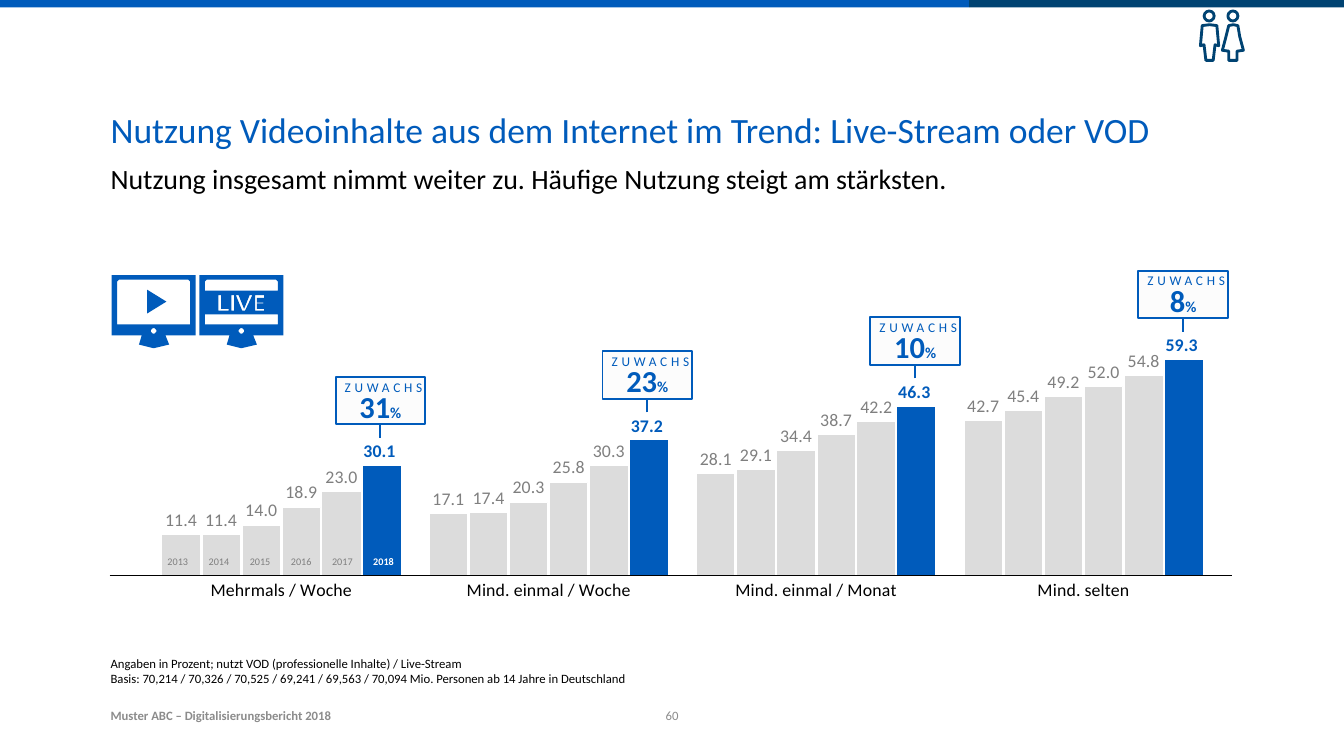
from pptx import Presentation
from pptx.chart.data import CategoryChartData
from pptx.dml.color import RGBColor
from pptx.enum.chart import XL_CHART_TYPE as ChartType
from pptx.enum.chart import XL_LABEL_POSITION as LabelPosition
from pptx.enum.chart import XL_TICK_MARK as TickMark
from pptx.enum.shapes import MSO_CONNECTOR as Connector
from pptx.enum.shapes import MSO_SHAPE as Shape
from pptx.enum.text import MSO_ANCHOR as Anchor
from pptx.enum.text import MSO_AUTO_SIZE as AutoSize
from pptx.enum.text import PP_ALIGN as Align
from pptx.oxml import parse_xml
from pptx.oxml.ns import nsdecls, qn
from pptx.util import Pt

PX = 9144
FONT = "Calibri"
BLUE = RGBColor(0x00, 0x5B, 0xBB)
NAVY = RGBColor(0x00, 0x43, 0x72)
BLACK = RGBColor(0x00, 0x00, 0x00)
WHITE = RGBColor(0xFF, 0xFF, 0xFF)
BAR_GREY = RGBColor(0xDC, 0xDC, 0xDC)
LABEL_GREY = RGBColor(0x7F, 0x7F, 0x7F)
FOOTER_GREY = RGBColor(0x8C, 0x8C, 0x8C)
CALLOUT_FILL = RGBColor(0xFC, 0xFC, 0xFC)
NO_STYLE = "{2D5ABB26-0587-4C30-8999-92F81FD0307C}"

FREQUENCIES = ["Mehrmals / Woche", "Mind. einmal / Woche",
               "Mind. einmal / Monat", "Mind. selten"]
USAGE = {
    "2013": (11.4, 17.1, 28.1, 42.7),
    "2014": (11.4, 17.4, 29.1, 45.4),
    "2015": (14.0, 20.3, 34.4, 49.2),
    "2016": (18.9, 25.8, 38.7, 52.0),
    "2017": (23.0, 30.3, 42.2, 54.8),
    "2018": (30.1, 37.2, 46.3, 59.3),
}
GROWTH = [("31", 412), ("23", 384), ("10", 347), ("8", 296)]

MONITOR = [
    [(0, 0), (92, 0), (92, 66), (59, 66), (63, 76), (46, 80), (30, 76), (33, 66), (0, 66)],
    [(45, 58), (47, 58), (49, 60), (49, 62), (47, 64), (45, 64), (43, 62), (43, 60)],
]
PLAY_SCREEN = [
    [(6, 7), (8, 5), (84, 5), (86, 7), (86, 54), (6, 54)],
    [(39, 16), (60, 29), (39, 42)],
]
LIVE_SCREEN = [
    [(6, 7), (8, 5), (84, 5), (86, 7), (86, 17), (6, 17)],
    [(6, 43), (86, 43), (86, 54), (6, 54)],
    [(21, 22), (24, 22), (24, 37), (32, 37), (32, 39), (21, 39)],
    [(35, 22), (38, 22), (38, 39), (35, 39)],
    [(40, 22), (43, 22), (49, 37), (55, 22), (58, 22), (50, 39), (47, 39)],
    [(61, 22), (71, 22), (71, 25), (63, 25), (63, 30), (70, 30), (70, 31),
     (63, 31), (63, 37), (71, 37), (71, 39), (61, 39)],
]
MAN = [(4, 17), (12, 16), (20, 17), (22, 39), (18, 38), (16, 55), (8, 55), (6, 38), (2, 39)]
WOMAN = [(33, 17), (38, 16), (43, 17), (45, 29), (49, 44), (42, 45), (42, 55),
         (33, 55), (33, 45), (26, 44), (30, 29)]


def box(left, top, width, height):
    return left * PX, top * PX, width * PX, height * PX


def style_font(font, size, color, bold=False):
    font.name = FONT
    font.size = Pt(size)
    font.bold = bold
    font.color.rgb = color


def set_text(frame, text, size, color, bold=False, align=Align.LEFT,
             anchor=Anchor.TOP, insets=(0, 0, 0, 0)):
    frame.word_wrap = True
    frame.auto_size = AutoSize.NONE
    frame.vertical_anchor = anchor
    frame.margin_left, frame.margin_top, frame.margin_right, frame.margin_bottom = (
        inset * PX for inset in insets)
    paragraph = frame.paragraphs[0]
    paragraph.text = text
    paragraph.alignment = align
    paragraph.space_before = Pt(0)
    for run in paragraph.runs:
        style_font(run.font, size, color, bold)
    return paragraph


def fill_placeholder(placeholder, area, text, size, color, anchor=Anchor.TOP):
    placeholder.left, placeholder.top, placeholder.width, placeholder.height = box(*area)
    set_text(placeholder.text_frame, text, size, color, anchor=anchor)


def add_label(slide, area, text, size, color, **layout):
    label = slide.shapes.add_textbox(*box(*area))
    return set_text(label.text_frame, text, size, color, **layout)


def add_block(slide, kind, area, fill=None, line=None, weight=1.5):
    block = slide.shapes.add_shape(kind, *box(*area))
    paint(block, fill, line, weight)
    return block


def paint(shape, fill, line, weight):
    shape.shadow.inherit = False
    if fill is None:
        shape.fill.background()
    else:
        shape.fill.solid()
        shape.fill.fore_color.rgb = fill
    if line is None:
        shape.line.fill.background()
    else:
        shape.line.color.rgb = line
        shape.line.width = Pt(weight)


def add_outline(slide, left, top, contours, fill=None, line=None, weight=1.5):
    moved = [[(left + x, top + y) for x, y in contour] for contour in contours]
    builder = slide.shapes.build_freeform(*moved[0][0], scale=PX)
    for contour in moved:
        builder.move_to(*contour[0])
        builder.add_line_segments(contour[1:], close=True)
    paint(builder.convert_to_shape(), fill, line, weight)


def add_rule(slide, start, end, color, weight):
    rule = slide.shapes.add_connector(
        Connector.STRAIGHT, *(value * PX for value in (*start, *end)))
    rule.line.color.rgb = color
    rule.line.width = Pt(weight)
    rule._element.spPr.append(parse_xml(f"<a:effectLst {nsdecls('a')}/>"))
    return rule


def add_usage_chart(slide):
    data = CategoryChartData()
    data.categories = FREQUENCIES
    for year, values in USAGE.items():
        data.add_series(year, values)
    chart = slide.shapes.add_chart(
        ChartType.COLUMN_CLUSTERED, *box(120, 299, 1258, 464), data).chart
    chart.has_legend = False
    chart.has_title = False
    style_font(chart.font, 18, BLACK)
    frequency_axis, percent_axis = chart.category_axis, chart.value_axis
    frequency_axis.major_tick_mark = TickMark.NONE
    frequency_axis.format.line.fill.background()
    style_font(frequency_axis.tick_labels.font, 14, BLACK)
    percent_axis.minimum_scale, percent_axis.maximum_scale = 0, 80
    percent_axis.has_major_gridlines = False
    percent_axis.visible = False
    plot = chart.plots[0]
    plot.gap_width, plot.overlap = 75, -5
    plot.vary_by_categories = False
    for series in plot.series:
        latest = series.name == "2018"
        series.format.fill.solid()
        series.format.fill.fore_color.rgb = BLUE if latest else BAR_GREY
        if series.name < "2017":
            series.format.line.color.rgb = WHITE
            series.format.line.width = Pt(0.75)
        labels = series.data_labels
        labels.show_value = True
        labels.position = LabelPosition.OUTSIDE_END
        labels.number_format = "0.0\\ " if latest else "#,##0.0"
        labels.number_format_is_linked = False
        style_font(labels.font, 14, BLUE if latest else LABEL_GREY, latest)
    set_plot_area(chart._chartSpace, x=0.033, y=0.026, w=0.93, h=0.688)


def set_plot_area(chart_space, **inner):
    plot_area = chart_space.chart.plotArea
    for old_layout in plot_area.findall(qn("c:layout")):
        plot_area.remove(old_layout)
    modes = "".join(f'<c:{axis}Mode val="edge"/>' for axis in "xy")
    sizes = "".join(f'<c:{key} val="{value}"/>' for key, value in inner.items())
    plot_area.insert(0, parse_xml(
        f'<c:layout {nsdecls("c")}><c:manualLayout><c:layoutTarget val="inner"/>'
        f"{modes}{sizes}</c:manualLayout></c:layout>"))
    chart_space.chart.addnext(parse_xml(
        f'<c:spPr {nsdecls("c", "a")}><a:noFill/><a:ln><a:noFill/></a:ln></c:spPr>'))


def add_year_table(slide):
    years = slide.shapes.add_table(1, len(USAGE), *box(172, 603, 270, 31)).table
    years.first_row = years.horz_banding = False
    years._tbl.tblPr.find(qn("a:tableStyleId")).text = NO_STYLE
    for cell, year in zip(years.rows[0].cells, USAGE):
        latest = year == "2018"
        cell.fill.background()
        cell.margin_left = cell.margin_right = 0
        cell.text_frame.text = year
        paragraph = cell.text_frame.paragraphs[0]
        paragraph.alignment = Align.CENTER
        style_font(paragraph.runs[0].font, 8, WHITE if latest else LABEL_GREY, latest)


def add_growth_callout(slide, left, top, growth):
    callout = add_block(slide, Shape.RECTANGLE, (left, top, 98, 52), CALLOUT_FILL, BLUE)
    number = set_text(callout.text_frame, growth, 24, BLUE, bold=True, align=Align.CENTER,
                      anchor=Anchor.BOTTOM, insets=(10, 12, 10, 0))
    percent = number.add_run()
    percent.text = "%"
    style_font(percent.font, 12, BLUE, True)
    stem = add_rule(slide, (left + 49, top + 67), (left + 49, top + 52), BLUE, 1.5)
    stem.end_connect(callout, 2)
    caption = add_label(slide, (left - 19, top - 10, 143, 42), "ZUWACHS", 10.5, BLUE,
                        align=Align.CENTER, anchor=Anchor.MIDDLE, insets=(12, 12, 12, 12))
    caption.runs[0].font._element.set("spc", "300")


def add_people(slide, left, top):
    for head_left, body in ((6, MAN), (32, WOMAN)):
        add_block(slide, Shape.OVAL, (left + head_left, top + 1, 11, 11),
                  line=NAVY, weight=2.25)
        add_outline(slide, left, top, [body], line=NAVY, weight=2.25)


def main():
    deck = Presentation()
    deck.slide_width, deck.slide_height = 1470 * PX, 827 * PX
    slide = deck.slides.add_slide(deck.slide_layouts[4])
    title, subtitle, unused_left, footnote, unused_right = slide.placeholders
    for unused in (unused_left, unused_right):
        unused._element.getparent().remove(unused._element)

    add_block(slide, Shape.RECTANGLE, (0, 0, 1060, 8), BLUE)
    add_block(slide, Shape.RECTANGLE, (1060, 0, 410, 8), NAVY)
    fill_placeholder(title, (121, 118, 1228, 59),
                     "Nutzung Videoinhalte aus dem Internet im Trend: Live-Stream oder VOD", 28, BLUE)
    fill_placeholder(subtitle, (121, 177, 1095, 79),
                     "Nutzung insgesamt nimmt weiter zu. Häufige Nutzung steigt am stärksten.", 22, BLACK)
    fill_placeholder(footnote, (121, 720, 1095, 31),
                     "Angaben in Prozent; nutzt VOD (professionelle Inhalte) / Live-Stream\n"
                     "Basis: 70,214 / 70,326 / 70,525 / 69,241 / 69,563 / 70,094 Mio. "
                     "Personen ab 14 Jahre in Deutschland", 10, BLACK, Anchor.BOTTOM)
    add_usage_chart(slide)
    add_year_table(slide)
    add_outline(slide, 218, 301, MONITOR + LIVE_SCREEN, BLUE)
    add_outline(slide, 122, 301, MONITOR + PLAY_SCREEN, BLUE)
    for group, (growth, top) in enumerate(GROWTH):
        add_growth_callout(slide, 367 + group * 878 // 3, top, growth)
    add_rule(slide, (120, 629), (1348, 629), BLACK, 0.25)
    add_people(slide, 1311, 11)
    add_label(slide, (121, 768, 418, 23), "Muster ABC – Digitalisierungsbericht 2018",
              10, FOOTER_GREY, bold=True, anchor=Anchor.BOTTOM)
    add_label(slide, (719, 766, 32, 25), "60", 10, FOOTER_GREY,
              align=Align.CENTER, anchor=Anchor.BOTTOM)
    deck.save("out.pptx")


if __name__ == "__main__":
    main()
